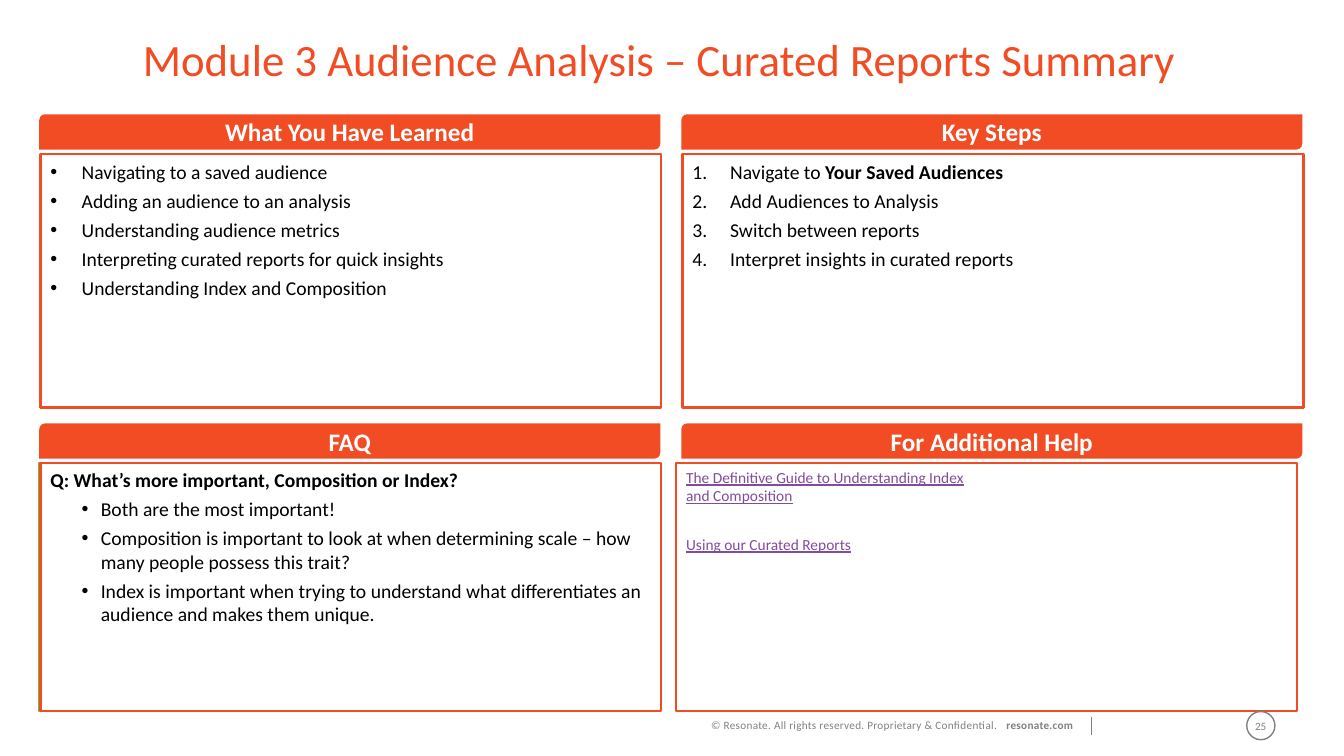
from dataclasses import dataclass

from lxml.etree import SubElement
from pptx import Presentation
from pptx.dml.color import RGBColor
from pptx.enum.shapes import MSO_CONNECTOR, MSO_SHAPE
from pptx.enum.text import MSO_ANCHOR, MSO_AUTO_SIZE, PP_ALIGN
from pptx.oxml.ns import qn
from pptx.util import Cm, Pt


@dataclass(frozen=True)
class Theme:
    font: str = "Calibri"
    orange: str = "F14C23"
    green: str = "7FB33A"
    purple: str = "824B9E"
    gray: str = "808080"
    black: str = "000000"
    white: str = "FFFFFF"
    title: int = 32
    heading: int = 18
    body: int = 14
    link: int = 11
    footer: int = 8


@dataclass(frozen=True)
class Frame:
    left: float
    top: float
    width: float
    height: float

    def lengths(self) -> tuple:
        return Cm(self.left), Cm(self.top), Cm(self.width), Cm(self.height)


@dataclass(frozen=True)
class Span:
    text: str
    bold: bool = False


@dataclass(frozen=True)
class Item:
    spans: tuple
    bullet: str = ""
    margin: float = 0
    hanging: float = 0
    level: int = 0


@dataclass(frozen=True)
class Panel:
    heading: str
    heading_left: float
    heading_top: float
    frame: Frame
    items: tuple
    size: int
    color: str
    underline: bool = False
    space_after: float = 4
    columns: int = 1


THEME = Theme()
PANEL_WIDTH = 15.65
HEADING_HEIGHT = 0.89
LEFT, RIGHT = 0.99, 17.17
UPPER, LOWER = 2.88, 10.67
UPPER_BODY, LOWER_BODY = 3.89, 11.66
UPPER_HEIGHT, LOWER_HEIGHT = 6.38, 6.25


def dotted(text: str) -> Item:
    return Item((Span(text),), "•", 0.79, 0.79)


def numbered(*spans: Span) -> Item:
    return Item(spans, "1.", 0.95, 0.95)


def answer(text: str) -> Item:
    return Item((Span(text),), "•", 1.27, 0.48, 1)


PANELS = (
    Panel("What You Have Learned", LEFT, UPPER,
          Frame(1.02, UPPER_BODY, PANEL_WIDTH, UPPER_HEIGHT),
          (dotted("Navigating to a saved audience"),
           dotted("Adding an audience to an analysis"),
           dotted("Understanding audience metrics"),
           dotted("Interpreting curated reports for quick insights"),
           dotted("Understanding Index and Composition")),
          THEME.body, THEME.black),
    Panel("Key Steps", RIGHT, UPPER,
          Frame(17.2, UPPER_BODY, PANEL_WIDTH, UPPER_HEIGHT),
          (numbered(Span("Navigate to "), Span("Your Saved Audiences", True)),
           numbered(Span("Add Audiences to Analysis")),
           numbered(Span("Switch between reports")),
           numbered(Span("Interpret insights in curated reports"))),
          THEME.body, THEME.black),
    Panel("FAQ", LEFT, LOWER,
          Frame(1.02, LOWER_BODY, PANEL_WIDTH, LOWER_HEIGHT),
          (Item((Span("Q: What’s more important, Composition or Index?", True),)),
           answer("Both are the most important!"),
           answer("Composition is important to look at when determining scale – "
                  "how many people possess this trait?"),
           answer("Index is important when trying to understand what differentiates "
                  "an audience and makes them unique.")),
          THEME.body, THEME.black),
    Panel("For Additional Help", RIGHT, LOWER,
          Frame(17.04, LOWER_BODY, PANEL_WIDTH, LOWER_HEIGHT),
          (Item((Span("The Definitive Guide to Understanding Index and Composition"),)),
           Item((Span("Using our Curated Reports"),))),
          THEME.link, THEME.purple, underline=True, space_after=21.5, columns=2),
)


def add_span(para, text: str, *, size: int, color: str, bold: bool = False,
             underline: bool = False, tracking: float = 0) -> None:
    span = para.add_run()
    span.text = text
    span.font.name = THEME.font
    span.font.size = Pt(size)
    span.font.bold = bold
    span.font.color.rgb = RGBColor.from_string(color)
    if underline:
        span.font.underline = True
    if tracking:
        span.font._element.set("spc", str(round(tracking * 100)))


def place(box, frame: Frame) -> None:
    box.left, box.top, box.width, box.height = frame.lengths()


def set_frame(box, *, anchor=MSO_ANCHOR.TOP, wrap: bool = True, side: float = 0.25) -> None:
    text = box.text_frame
    text.auto_size = MSO_AUTO_SIZE.NONE
    text.word_wrap = wrap
    text.vertical_anchor = anchor
    text.margin_left = text.margin_right = Cm(side)
    text.margin_top = text.margin_bottom = Cm(0.13)


def paint(box, fill: str = "", line: str = "", weight: float = 1.5) -> None:
    if fill:
        box.fill.solid()
        box.fill.fore_color.rgb = RGBColor.from_string(fill)
    else:
        box.fill.background()
    if line:
        box.line.color.rgb = RGBColor.from_string(line)
        box.line.width = Pt(weight)
    else:
        box.line.fill.background()


def add_box(page, kind, frame: Frame):
    box = page.shapes.add_shape(kind, *frame.lengths())
    box.shadow.inherit = False
    return box


def set_bullet(para, item: Item) -> None:
    properties = para._p.get_or_add_pPr()
    properties.set("marL", str(Cm(item.margin)))
    properties.set("indent", str(-Cm(item.hanging)))
    if item.bullet == "1.":
        SubElement(properties, qn("a:buFont"), typeface="+mj-lt")
        SubElement(properties, qn("a:buAutoNum"), type="arabicPeriod")
    elif item.bullet:
        SubElement(properties, qn("a:buFont"), typeface="Arial")
        SubElement(properties, qn("a:buChar"), char=item.bullet)
    else:
        SubElement(properties, qn("a:buNone"))


def draw_panel(page, panel: Panel, body) -> None:
    heading = add_box(page, MSO_SHAPE.ROUND_2_DIAG_RECTANGLE,
                      Frame(panel.heading_left, panel.heading_top, PANEL_WIDTH, HEADING_HEIGHT))
    paint(heading, THEME.orange)
    set_frame(heading, anchor=MSO_ANCHOR.MIDDLE)
    para = heading.text_frame.paragraphs[0]
    para.alignment = PP_ALIGN.CENTER
    add_span(para, panel.heading, size=THEME.heading, color=THEME.white, bold=True)

    place(body, panel.frame)
    paint(body, THEME.white, THEME.orange)
    set_frame(body)
    if panel.columns > 1:
        body.text_frame._txBody.bodyPr.set("numCol", str(panel.columns))
    for index, item in enumerate(panel.items):
        para = body.text_frame.add_paragraph() if index else body.text_frame.paragraphs[0]
        para.level = item.level
        set_bullet(para, item)
        para.space_before = Pt(0)
        para.space_after = Pt(panel.space_after)
        for span in item.spans:
            add_span(para, span.text, size=panel.size, color=panel.color,
                     bold=span.bold, underline=panel.underline)


def draw_title(page) -> None:
    title = page.shapes.title
    place(title, Frame(1.52, 0.69, 30.2, 1.75))
    set_frame(title, anchor=MSO_ANCHOR.MIDDLE, side=1.02)
    para = title.text_frame.paragraphs[0]
    para.alignment = PP_ALIGN.CENTER
    para.line_spacing = 0.9
    add_span(para, "Module 3 Audience Analysis – Curated Reports Summary",
             size=THEME.title, color=THEME.orange)


def draw_footer(page) -> None:
    number = add_box(page, MSO_SHAPE.OVAL, Frame(31.42, 17.93, 0.71, 0.71))
    paint(number, line=THEME.gray, weight=1)
    set_frame(number, anchor=MSO_ANCHOR.MIDDLE, wrap=False)
    para = number.text_frame.paragraphs[0]
    para.alignment = PP_ALIGN.CENTER
    add_span(para, "25", size=THEME.footer, color=THEME.gray)

    notice = page.shapes.add_textbox(*Frame(16.5, 17.98, 10.8, 0.61).lengths())
    set_frame(notice)
    para = notice.text_frame.paragraphs[0]
    para.alignment = PP_ALIGN.RIGHT
    for text, bold, tracking in (
            ("© Resonate. All rights reserved. Proprietary & Confidential.", False, 0.2),
            (" ", False, 4.2),
            ("resonate.com", True, 0.2)):
        add_span(para, text, size=THEME.footer, color=THEME.gray, bold=bold, tracking=tracking)

    divider = page.shapes.add_connector(MSO_CONNECTOR.STRAIGHT,
                                        Cm(27.51), Cm(18.06), Cm(27.51), Cm(18.52))
    divider.line.color.rgb = RGBColor.from_string(THEME.gray)
    divider.line.width = Pt(0.5)
    SubElement(divider._element.spPr, qn("a:effectLst"))


def main() -> None:
    deck = Presentation()
    deck.slide_width, deck.slide_height = Cm(33.87), Cm(19.05)
    page = deck.slides.add_slide(deck.slide_layouts[4])
    draw_title(page)
    green_edge = add_box(page, MSO_SHAPE.RECTANGLE,
                         Frame(LEFT, LOWER_BODY, PANEL_WIDTH, LOWER_HEIGHT))
    paint(green_edge, THEME.white, THEME.green)
    page.shapes.title.element.addprevious(green_edge.element)
    for index, panel in enumerate(PANELS, start=1):
        draw_panel(page, panel, page.placeholders[index])
    draw_footer(page)
    deck.save("out.pptx")


if __name__ == "__main__":
    main()
